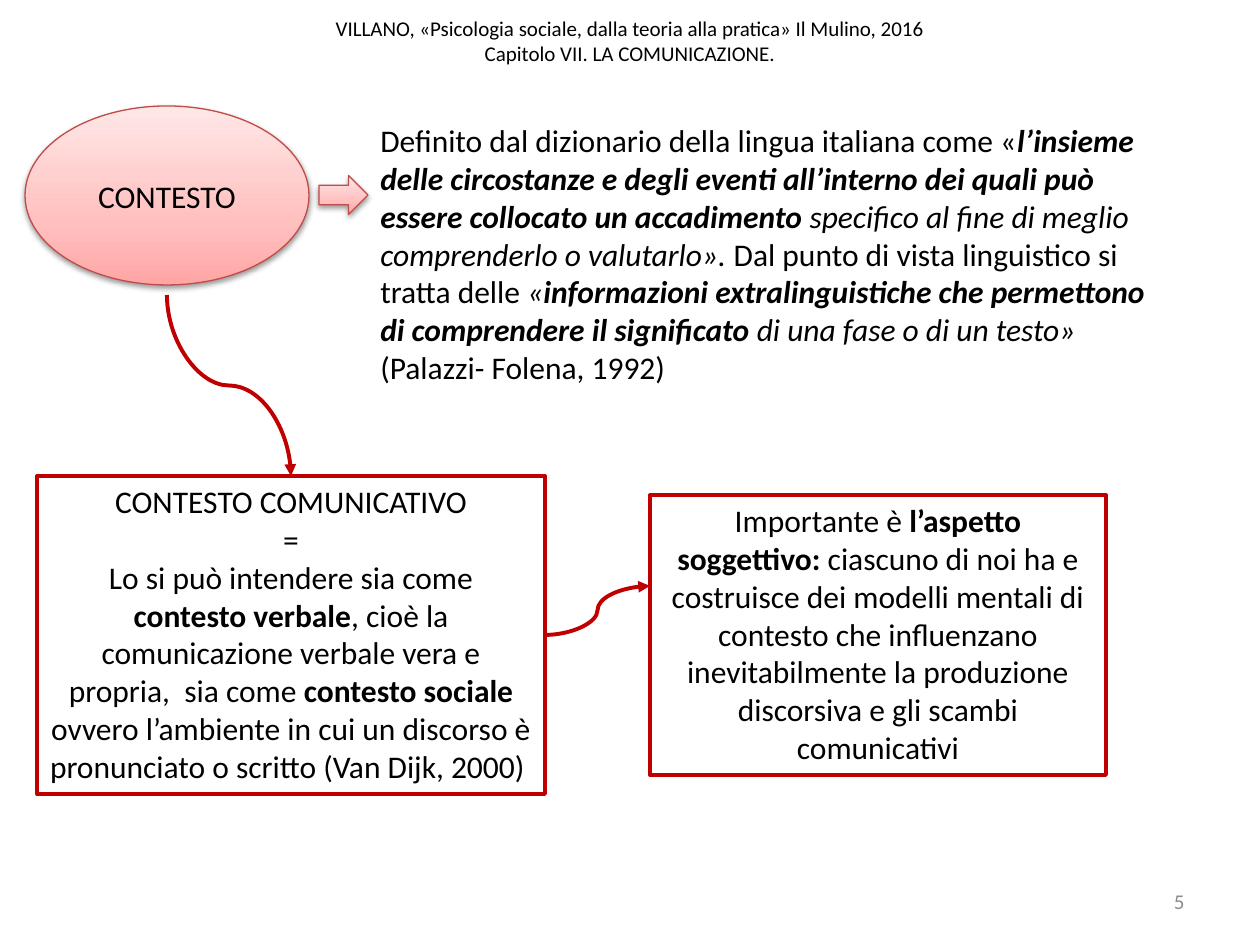
from lxml import etree
from pptx import Presentation
from pptx import util as u
from pptx.dml.color import RGBColor
from pptx.enum import shapes, text
from pptx.oxml import parse_xml
from pptx.oxml.ns import nsdecls, qn

PX = 914400 / 126
BLACK, RED, ROSE, GREY = "000000", "C00000", "BF4C48", "8C8C8C"
ROSE_STOPS = ((0, "FFA6A5"), (35, "FFC0BF"), (100, "FFE7E7"))
PLAIN, BOLD, ITALIC = {}, {"bold": True}, {"italic": True}
BOLD_ITALIC = {**BOLD, **ITALIC}
CENTER = text.PP_ALIGN.CENTER

HEADING = ("VILLANO, «Psicologia sociale, dalla teoria alla pratica» Il Mulino, 2016",
           "Capitolo VII. LA COMUNICAZIONE.")
DEFINITION = [[
    ("Definito dal dizionario della lingua italiana come «", PLAIN),
    ("l’insieme delle circostanze e degli eventi all’interno dei quali può "
     "essere collocato un accadimento ", BOLD_ITALIC),
    ("specifico al fine di meglio comprenderlo o valutarlo». ", ITALIC),
    ("Dal punto di vista linguistico si tratta delle", PLAIN),
    (" «", ITALIC),
    ("informazioni extralinguistiche che permettono di comprendere il significato",
     BOLD_ITALIC),
    (" di una fase o di un testo» ", ITALIC),
    ("(Palazzi- Folena, 1992)", PLAIN),
]]
COMMUNICATIVE = [
    [("CONTESTO COMUNICATIVO", PLAIN)],
    [("=", PLAIN)],
    [("Lo si può intendere sia come ", PLAIN),
     ("contesto verbale", BOLD),
     (", cioè la comunicazione verbale vera e propria,  sia come ", PLAIN),
     ("contesto sociale ", BOLD),
     ("ovvero l’ambiente in cui un discorso è pronunciato o scritto "
      "(Van Dijk, 2000) ", PLAIN)],
]
SUBJECTIVE = [[
    ("Importante è ", PLAIN),
    ("l’aspetto soggettivo: ", BOLD),
    ("ciascuno di noi ha e costruisce dei modelli mentali di contesto che "
     "influenzano inevitabilmente la produzione discorsiva e gli scambi "
     "comunicativi", PLAIN),
]]


def emu(*lengths):
    """Turn px lengths into EMU."""
    return [u.Emu(round(length * PX)) for length in lengths]


def rgb(value):
    """Turn a hex string into a colour."""
    return RGBColor.from_string(value)


def style_run(run, size, color, style):
    """Give a run its font, size, colour and emphasis."""
    for key, value in {"name": "Calibri", "size": u.Pt(size), **style}.items():
        setattr(run.font, key, value)
    run.font.color.rgb = rgb(color)


def write(frame, paragraphs, align=CENTER, size=18, color=BLACK,
          anchor=text.MSO_ANCHOR.TOP):
    """Fill a text frame with paragraphs of (words, style) runs."""
    frame.word_wrap = True
    frame.vertical_anchor = anchor
    for index, runs in enumerate(paragraphs):
        paragraph = frame.add_paragraph() if index else frame.paragraphs[0]
        paragraph.alignment = align
        for words, style in runs:
            run = paragraph.add_run()
            run.text = words
            style_run(run, size, color, style)


def add_heading(slide, box):
    """Place the two-line source heading in the title placeholder."""
    title = slide.shapes.title
    for key, value in zip(("left", "top", "width", "height"), emu(*box)):
        setattr(title, key, value)
    frame = title.text_frame
    frame.auto_size = text.MSO_AUTO_SIZE.NONE
    write(frame, [[(HEADING[0], PLAIN)]], size=12, anchor=text.MSO_ANCHOR.MIDDLE)
    paragraph = frame.paragraphs[0]
    paragraph.add_line_break()
    line_break = paragraph._p.find(qn("a:br"))
    etree.SubElement(line_break, qn("a:rPr"), sz="1200")
    chapter = paragraph.add_run()
    chapter.text = HEADING[1]
    style_run(chapter, 12, BLACK, PLAIN)


def add_rose(slide, kind, box):
    """Add a rose shape with a vertical gradient and a soft shadow."""
    rose = slide.shapes.add_shape(kind, *emu(*box))
    rose.line.color.rgb = rgb(ROSE)
    rose.line.width = u.Pt(0.75)
    stops = "".join(f'<a:gs pos="{pos * 1000}"><a:srgbClr val="{color}"/></a:gs>'
                    for pos, color in ROSE_STOPS)
    properties = rose._element.spPr
    properties.find(qn("a:ln")).addprevious(parse_xml(
        f'<a:gradFill {nsdecls("a")} rotWithShape="1"><a:gsLst>{stops}</a:gsLst>'
        '<a:lin ang="16200000" scaled="0"/></a:gradFill>'))
    properties.append(parse_xml(
        f'<a:effectLst {nsdecls("a")}><a:outerShdw blurRad="40000" dist="20000" '
        'dir="5400000" rotWithShape="0"><a:srgbClr val="000000">'
        '<a:alpha val="38000"/></a:srgbClr></a:outerShdw></a:effectLst>'))
    return rose


def add_context(slide, box):
    """Place the context ellipse with the arrow to its right."""
    left, top, width, height = box
    ellipse = add_rose(slide, shapes.MSO_SHAPE.OVAL, box)
    write(ellipse.text_frame, [[("CONTESTO", PLAIN)]], anchor=text.MSO_ANCHOR.MIDDLE)
    add_rose(slide, shapes.MSO_SHAPE.RIGHT_ARROW,
             (left + width + 10, top + height / 2 - 20, 49, 39))


def add_words(slide, box, paragraphs, **layout):
    """Place unframed text."""
    words = slide.shapes.add_textbox(*emu(*box))
    write(words.text_frame, paragraphs, **layout)


def add_framed(slide, box, paragraphs):
    """Place centred text in a red frame."""
    frame = slide.shapes.add_shape(shapes.MSO_SHAPE.RECTANGLE, *emu(*box))
    frame.shadow.inherit = False
    frame.fill.background()
    frame.line.color.rgb = rgb(RED)
    frame.line.width = u.Pt(2.25)
    write(frame.text_frame, paragraphs)


def add_curve(slide, start, end, downward=False):
    """Add a red curved arrow, leaving its start downward or sideways."""
    (x1, y1), (x2, y2) = start, end
    if downward:
        cx, cy, dx, dy = (x1 + x2) / 2, (y1 + y2) / 2, (x2 - x1) / 2, (y2 - y1) / 2
        x1, y1, x2, y2 = cx + dy, cy - dx, cx - dy, cy + dx
    curve = slide.shapes.add_connector(shapes.MSO_CONNECTOR.CURVE, *emu(x1, y1, x2, y2))
    curve.line.color.rgb = rgb(RED)
    curve.line.width = u.Pt(2.25)
    properties = curve._element.spPr
    if downward:
        properties.find(qn("a:xfrm")).set("rot", "16200000")
    etree.SubElement(properties.find(qn("a:ln")), qn("a:tailEnd"), type="triangle")
    etree.SubElement(properties, qn("a:effectLst"))


def main():
    """Build and save the slide."""
    deck = Presentation()
    deck.slide_width, deck.slide_height = emu(1260, 945)
    slide = deck.slides.add_slide(deck.slide_layouts[5])
    communicative, subjective = (37, 476, 508, 318), (650, 495, 456, 280)
    add_heading(slide, (0, -14, 1260, 110))
    add_words(slide, (903, 876, 294, 50), [[("5", PLAIN)]], size=12, color=GREY,
              align=text.PP_ALIGN.RIGHT, anchor=text.MSO_ANCHOR.MIDDLE)
    add_context(slide, (25, 106, 284, 179))
    add_words(slide, (368, 115, 808, 280), DEFINITION, align=text.PP_ALIGN.LEFT)
    add_framed(slide, communicative, COMMUNICATIVE)
    add_curve(slide, (167, 295), (291, 476), downward=True)
    add_curve(slide, (545, 635), (650, 586))
    add_framed(slide, subjective, SUBJECTIVE)
    deck.save("out.pptx")


if __name__ == "__main__":
    main()
